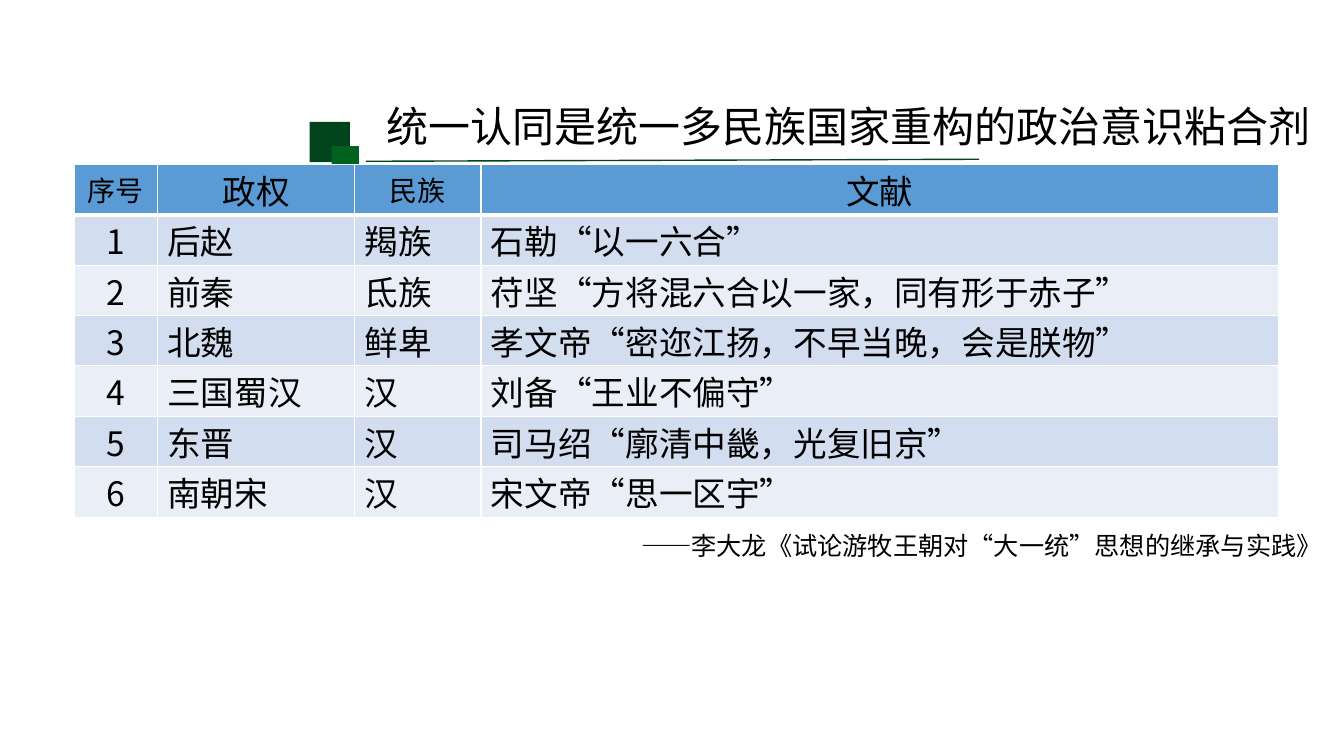
from lxml import etree
from pptx import Presentation, util as u
from pptx.dml.color import RGBColor
from pptx.enum import shapes, text
from pptx.oxml.ns import qn


def colour(hex_code):
    return RGBColor.from_string(hex_code)


class SlideBuilder:
    font_name = "Noto Sans CJK SC"
    ink = "000000"
    dark_green = "01431D"
    light_green = "01621F"
    header_fill = "5B9BD5"
    band_fills = ("D2DEEF", "EAEFF7")
    border = "FFFFFF"

    def __init__(self, slide):
        self.slide = slide

    def set_words(self, frame, words, size, align=text.PP_ALIGN.LEFT):
        frame.text = words
        paragraph = frame.paragraphs[0]
        paragraph.alignment = align
        font = paragraph.font
        font.name = self.font_name
        font.size = u.Pt(size)
        font.bold = False
        font.color.rgb = colour(self.ink)
        properties = paragraph._p.pPr.find(qn("a:defRPr"))
        etree.SubElement(properties, qn("a:ea"), typeface=self.font_name)

    def place(self, box, left, top, width, height):
        box.left, box.top = u.Inches(left), u.Inches(top)
        box.width, box.height = u.Inches(width), u.Inches(height)
        box.text_frame.auto_size = text.MSO_AUTO_SIZE.NONE
        box.text_frame.vertical_anchor = text.MSO_ANCHOR.MIDDLE

    def title(self, words, *bounds):
        heading = self.slide.shapes.title
        self.place(heading, *bounds)
        heading.text_frame.word_wrap = True
        self.set_words(heading.text_frame, words, 30, text.PP_ALIGN.CENTER)

    def caption(self, words, *bounds):
        source = self.slide.shapes.add_textbox(*map(u.Inches, bounds))
        self.place(source, *bounds)
        source.text_frame.word_wrap = False
        self.set_words(source.text_frame, words, 18)

    def rule(self, *ends):
        underline = self.slide.shapes.add_connector(
            shapes.MSO_CONNECTOR.STRAIGHT, *map(u.Inches, ends))
        underline.line.color.rgb = colour(self.dark_green)
        underline.line.width = u.Pt(1)
        etree.SubElement(underline._element.spPr, qn("a:effectLst"))

    def squares(self, *squares):
        emblem = self.slide.shapes.add_group_shape()
        for left, top, side, fill in squares:
            square = emblem.shapes.add_shape(
                shapes.MSO_SHAPE.RECTANGLE, *map(u.Inches, (left, top, side, side)))
            square.shadow.inherit = False
            square.fill.solid()
            square.fill.fore_color.rgb = colour(fill)
            square.line.fill.background()

    def borders(self, cell, top, bottom):
        properties = cell._tc.get_or_add_tcPr()
        widths = {"a:lnL": 1, "a:lnR": 1, "a:lnT": top, "a:lnB": bottom}
        for position, (tag, width) in enumerate(widths.items()):
            edge = etree.Element(qn(tag), w=str(u.Pt(width)))
            fill = etree.SubElement(edge, qn("a:solidFill"))
            etree.SubElement(fill, qn("a:srgbClr"), val=self.border)
            properties.insert(position, edge)

    def table(self, rows, left, top, widths, row_height):
        grid = self.slide.shapes.add_table(
            len(rows), len(widths), u.Inches(left), u.Inches(top),
            u.Inches(sum(widths)), u.Inches(row_height * len(rows))).table
        grid.first_row = grid.horz_banding = False
        for column, width in zip(grid.columns, widths):
            column.width = u.Inches(width)
        for r, row in enumerate(rows):
            grid.rows[r].height = u.Inches(row_height)
            for c, words in enumerate(row):
                cell = grid.cell(r, c)
                small = r == 0 and c in (0, 2)
                centred = r == 0 or c == 0
                cell.margin_top = u.Inches(0.05 if small else 0.01)
                cell.margin_bottom = 0
                cell.fill.solid()
                cell.fill.fore_color.rgb = colour(
                    self.band_fills[(r - 1) % 2] if r else self.header_fill)
                self.borders(cell, 3 if r == 1 else 1, 1 if r else 3)
                self.set_words(cell.text_frame, words, 20 if small else 24,
                               text.PP_ALIGN.CENTER if centred else text.PP_ALIGN.LEFT)


REGIMES = [
    ("后赵", "羯族", "石勒“以一六合”"),
    ("前秦", "氐族", "苻坚“方将混六合以一家，同有形于赤子”"),
    ("北魏", "鲜卑", "孝文帝“密迩江扬，不早当晚，会是朕物”"),
    ("三国蜀汉", "汉", "刘备“王业不偏守”"),
    ("东晋", "汉", "司马绍“廓清中畿，光复旧京”"),
    ("南朝宋", "汉", "宋文帝“思一区宇”"),
]


def main():
    deck = Presentation()
    deck.slide_width, deck.slide_height = u.Inches(13.33), u.Inches(7.5)
    page = SlideBuilder(deck.slides.add_slide(deck.slide_layouts[5]))
    page.rule(3.63, 1.6, 9.71, 1.58)
    page.squares((3.07, 1.21, 0.4, page.dark_green),
                 (3.29, 1.45, 0.27, page.light_green))
    page.title("统一认同是统一多民族国家重构的政治意识粘合剂", 3.63, 0.95, 9.58, 0.6)
    numbered = [(str(n), *regime) for n, regime in enumerate(REGIMES, 1)]
    page.table([("序号", "政权", "民族", "文献"), *numbered],
               0.74, 1.63, (0.82, 1.96, 1.25, 7.91), 0.5)
    page.caption("——李大龙《试论游牧王朝对“大一统”思想的继承与实践》", 6.26, 5.21, 6.95, 0.4)
    deck.save("out.pptx")


if __name__ == "__main__":
    main()
